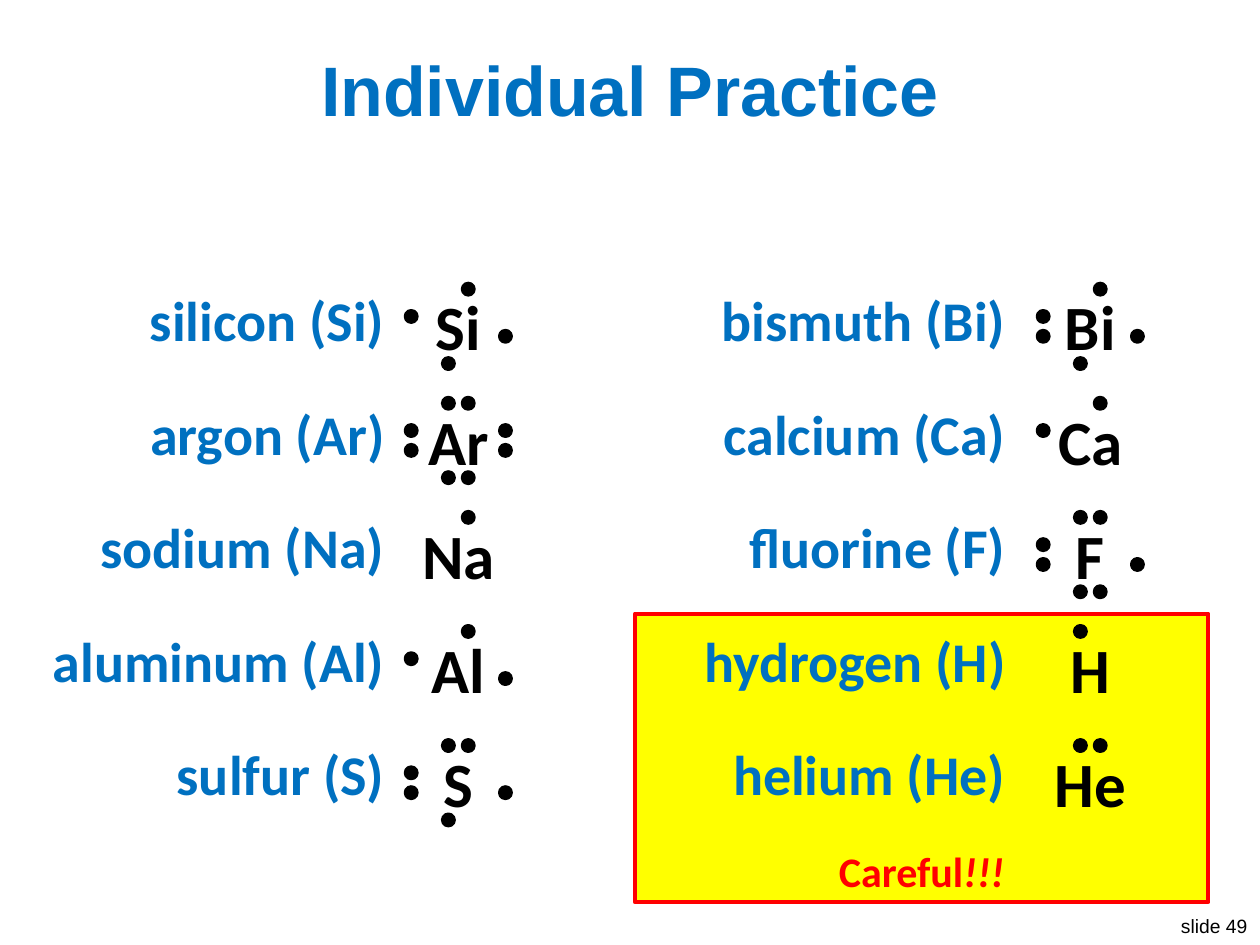
from pptx import Presentation
from pptx.dml.color import RGBColor
from pptx.enum.shapes import MSO_SHAPE as SHAPE
from pptx.enum.text import MSO_ANCHOR as ANCHOR, MSO_AUTO_SIZE as AUTO, PP_ALIGN as ALIGN
from pptx.util import Cm, Pt

BLUE, BLACK, RED, YELLOW = "0070C0", "000000", "FF0000", "FFFF00"
NO_GRID = "{2D5ABB26-0587-4C30-8999-92F81FD0307C}"
ROW, PITCH = 2.29, 2.3
NEAR, FAR, SIDE, DOT = 0.2, 0.75, 0.95, 0.23
SPOTS = {
    "a": (-NEAR, -FAR), "b": (NEAR, -FAR),
    "c": (SIDE, -NEAR), "d": (SIDE, NEAR),
    "e": (NEAR, FAR), "f": (-NEAR, FAR),
    "g": (-SIDE, NEAR), "h": (-SIDE, -NEAR),
}
LEFT = [("silicon", "Si", "bdfh"), ("argon", "Ar", "abcdefgh"), ("sodium", "Na", "b"),
        ("aluminum", "Al", "bdh"), ("sulfur", "S", "abdfgh")]
RIGHT = [("bismuth", "Bi", "bdfgh"), ("calcium", "Ca", "bh"), ("fluorine", "F", "abdefgh"),
         ("hydrogen", "H", "a"), ("helium", "He", "ab")]


def rgb(color):
    """Turn a hex string into a colour."""
    return RGBColor.from_string(color)


def write(tf, text, size=32, color=BLUE, font="Calibri", bold=True, italic=None,
          align=ALIGN.CENTER):
    """Add a formatted run to the first paragraph of a text frame."""
    p = tf.paragraphs[0]
    p.alignment = align
    r = p.add_run()
    r.text = text
    r.font.size, r.font.name = Pt(size), font
    r.font.bold, r.font.italic = bold, italic
    r.font.color.rgb = rgb(color)


def add_shape(shapes, kind, x, y, w, h, fill, line, weight):
    """Add a filled and outlined preset shape."""
    sp = shapes.add_shape(kind, Cm(x), Cm(y), Cm(w), Cm(h))
    sp.shadow.inherit = False
    sp.fill.solid()
    sp.fill.fore_color.rgb = rgb(fill)
    sp.line.color.rgb = rgb(line)
    sp.line.width = Pt(weight)
    return sp


def add_label(shapes, x, y, w, h):
    """Add a text box that fits its one line and return its frame."""
    tf = shapes.add_textbox(Cm(x), Cm(y), Cm(w), Cm(h)).text_frame
    tf.word_wrap = False
    tf.auto_size = AUTO.SHAPE_TO_FIT_TEXT
    return tf


def add_title(s, x, y, w, h):
    """Place and format the title placeholder."""
    sp = s.shapes.title
    sp.left, sp.top, sp.width, sp.height = Cm(x), Cm(y), Cm(w), Cm(h)
    sp.text_frame.vertical_anchor = ANCHOR.MIDDLE
    write(sp.text_frame, "Individual Practice", size=40, font="Arial")


def add_warning(s, x, y, w, h):
    """Add the yellow box behind the exceptional elements."""
    tf = add_shape(s.shapes, SHAPE.RECTANGLE, x, y, w, h, YELLOW, RED, 2.25).text_frame
    tf.vertical_anchor = ANCHOR.BOTTOM
    write(tf, "Careful", size=24, color=RED)
    write(tf, "!!!", size=24, color=RED, italic=True)


def add_names(s, elements, x, y, widths):
    """Add the table of element names beside an empty answer column."""
    frame = s.shapes.add_table(len(elements), len(widths), Cm(x), Cm(y),
                               Cm(sum(widths)), Cm(ROW * len(elements)))
    table = frame.table
    table.first_row = table.horz_banding = False
    table._tbl.tblPr[0].text = NO_GRID
    for col, width in zip(table.columns, widths):
        col.width = Cm(width)
    for cell in table.iter_cells():
        cell.fill.background()
        cell.vertical_anchor = ANCHOR.MIDDLE
    for i, (name, symbol, _) in enumerate(elements):
        write(table.cell(i, 0).text_frame, f"{name} ({symbol})", align=ALIGN.RIGHT)


def add_lewis(s, symbol, spots, cx, cy):
    """Add a grouped symbol with its valence dots around a centre."""
    shapes = s.shapes.add_group_shape().shapes
    w, h = 0.8 * len(symbol), 1.55
    tf = add_label(shapes, cx - w / 2, cy - h / 2, w, h)
    tf.margin_left = tf.margin_right = tf.margin_top = tf.margin_bottom = 0
    write(tf, symbol, size=36, color=BLACK)
    for spot in spots:
        dx, dy = SPOTS[spot]
        add_shape(shapes, SHAPE.OVAL, cx + dx - DOT / 2, cy + dy - DOT / 2,
                  DOT, DOT, BLACK, BLACK, 2)


def add_column(s, elements, x, y, widths, cx):
    """Add the names and Lewis symbols of one column."""
    add_names(s, elements, x, y, widths)
    for i, (_, symbol, spots) in enumerate(elements):
        add_lewis(s, symbol, spots, cx, y + 1.22 + i * PITCH)


def main():
    """Build and save the slide."""
    prs = Presentation()
    prs.slide_width, prs.slide_height = Cm(25.4), Cm(19.05)
    s = prs.slides.add_slide(prs.slide_layouts[5])
    write(add_label(s.shapes, 23.5, 18.31, 1.9, 0.74), "slide 49", size=11, color=BLACK,
          font="Arial", bold=False, align=ALIGN.RIGHT)
    add_warning(s, 12.8, 12.37, 11.56, 5.82)
    add_title(s, 0.51, 0.76, 24.38, 2.03)
    add_column(s, LEFT, 0.64, 5.36, (7.37, 2.62), 9.24)
    add_column(s, RIGHT, 11.89, 5.36, (8.64, 2.54), 21.98)
    prs.save("out.pptx")


if __name__ == "__main__":
    main()
